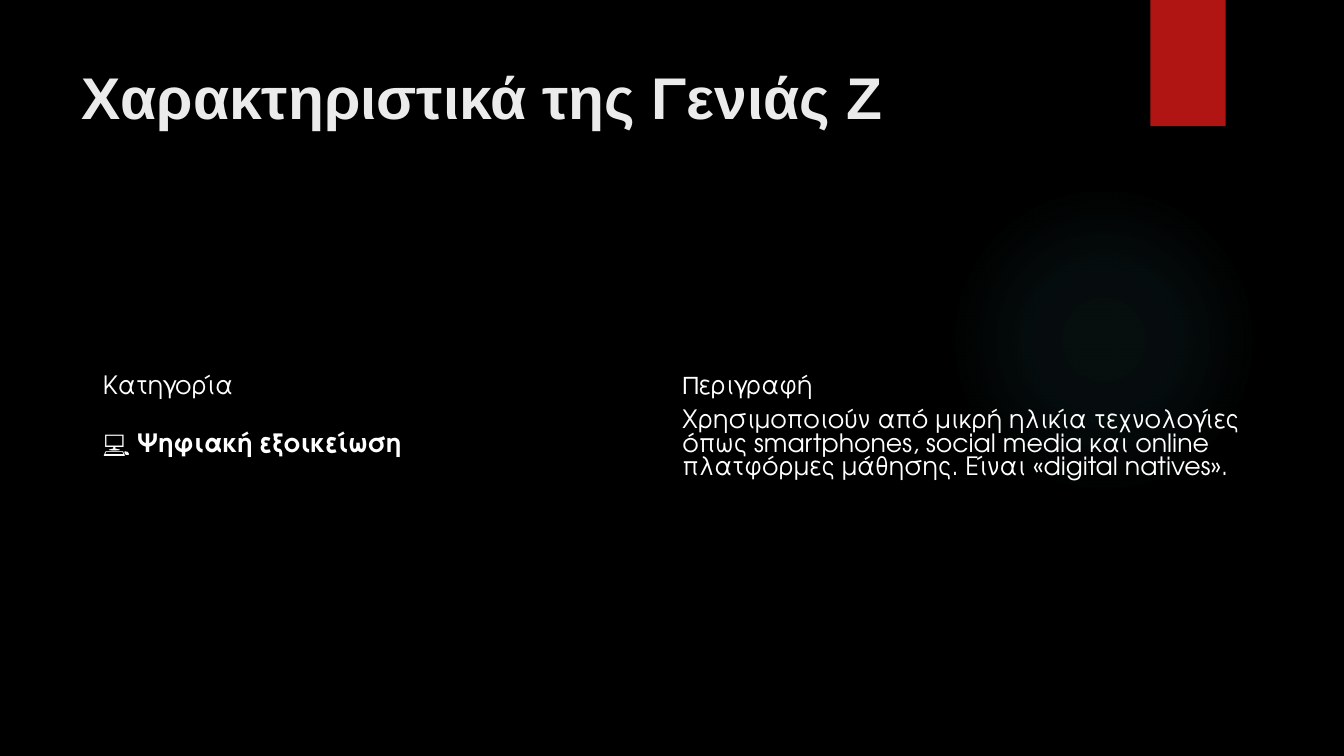
import pptx
import pptx.util
import pptx.dml.color
import pptx.enum.shapes
import pptx.enum.text
import pptx.oxml
import pptx.oxml.ns
from pptx.util import Cm

COLORS = {"bg": "000000", "title": "EBEBEB", "text": "FFFFFF", "accent": "B01513", "glow": "50B9C1"}
GLOW_STOPS = [(0, 7), (36, 6), (69, 0)]
NO_STYLE = "{2D5ABB26-0587-4C30-8999-92F81FD0307C}"
ROWS = [
    [[("Κατηγορία", False)], [("Περιγραφή", False)]],
    [[("💻 ", False), ("Ψηφιακή εξοικείωση", True)],
     [("Χρησιμοποιούν από μικρή ηλικία τεχνολογίες όπως smartphones, social media "
       "και online πλατφόρμες μάθησης. Είναι «digital natives».", False)]],
]


class Deck:
    """Holds the style and the current slide."""

    def __init__(self, prs):
        self.font = "TeX Gyre Adventor"
        self.s = prs.slides.add_slide(prs.slide_layouts[5])
        fill = self.s.background.fill
        fill.solid()
        fill.fore_color.rgb = self.rgb("bg")

    def rgb(self, name):
        return pptx.dml.color.RGBColor.from_string(COLORS[name])

    def style(self, p, font, size, color):
        p.font.name = font
        p.font.size = pptx.util.Pt(size)
        p.font.color.rgb = self.rgb(color)

    def shape(self, kind, x, y, w, h, color):
        sp = self.s.shapes.add_shape(kind, Cm(x), Cm(y), Cm(w), Cm(h))
        sp.shadow.inherit = False
        sp.line.fill.background()
        sp.fill.solid()
        sp.fill.fore_color.rgb = self.rgb(color)
        return sp

    def glow(self, x, y, size):
        sp = self.shape(pptx.enum.shapes.MSO_SHAPE.OVAL, x, y, size, size, "glow")
        stops = "".join(
            f'<a:gs pos="{pos * 1000}"><a:srgbClr val="{COLORS["glow"]}">'
            f'<a:alpha val="{alpha * 1000}"/></a:srgbClr></a:gs>' for pos, alpha in GLOW_STOPS)
        grad = pptx.oxml.parse_xml(
            f'<a:gradFill {pptx.oxml.ns.nsdecls("a")}><a:gsLst>{stops}</a:gsLst>'
            '<a:path path="circle"><a:fillToRect l="50000" t="50000" r="50000" b="50000"/>'
            '</a:path></a:gradFill>')
        solid = sp._element.spPr.find(pptx.oxml.ns.qn("a:solidFill"))
        solid.getparent().replace(solid, grad)

    def title(self, text, x, y, w, h):
        sp = self.s.shapes.title
        sp.left, sp.top, sp.width, sp.height = Cm(x), Cm(y), Cm(w), Cm(h)
        tf = sp.text_frame
        tf.word_wrap = True
        tf.auto_size = pptx.enum.text.MSO_AUTO_SIZE.NONE
        tf.vertical_anchor = pptx.enum.text.MSO_ANCHOR.TOP
        tf.margin_top = Cm(0.25)
        tf.text = text
        p = tf.paragraphs[0]
        p.alignment = pptx.enum.text.PP_ALIGN.LEFT
        p.font.bold = True
        self.style(p, "Arial", 42, "title")

    def table(self, rows, x, y, w, heights):
        frame = self.s.shapes.add_table(len(rows), len(rows[0]), Cm(x), Cm(y), Cm(w), Cm(sum(heights)))
        table = frame.table
        table.first_row = table.horz_banding = False
        table._tbl.tblPr.find(pptx.oxml.ns.qn("a:tableStyleId")).text = NO_STYLE
        for i, row in enumerate(rows):
            table.rows[i].height = Cm(heights[i])
            for j, runs in enumerate(row):
                self.cell(table.cell(i, j), runs)

    def cell(self, cell, runs):
        cell.fill.background()
        cell.vertical_anchor = pptx.enum.text.MSO_ANCHOR.MIDDLE
        p = cell.text_frame.paragraphs[0]
        for text, bold in runs:
            r = p.add_run()
            r.text = text
            r.font.bold = bold
        self.style(p, self.font, 18, "text")


def main():
    prs = pptx.Presentation()
    prs.slide_width, prs.slide_height = Cm(33.87), Cm(19.05)
    deck = Deck(prs)
    deck.glow(23.9, 4.65, 7.82)
    deck.shape(pptx.enum.shapes.MSO_SHAPE.RECTANGLE, 28.99, 0, 1.9, 3.18, "accent")
    deck.title("Χαρακτηριστικά της Γενιάς Ζ", 1.8, 1.27, 26.14, 3.89)
    deck.table(ROWS, 2.34, 9.35, 29.21, [0.85, 2.05])
    prs.save("out.pptx")


if __name__ == "__main__":
    main()
